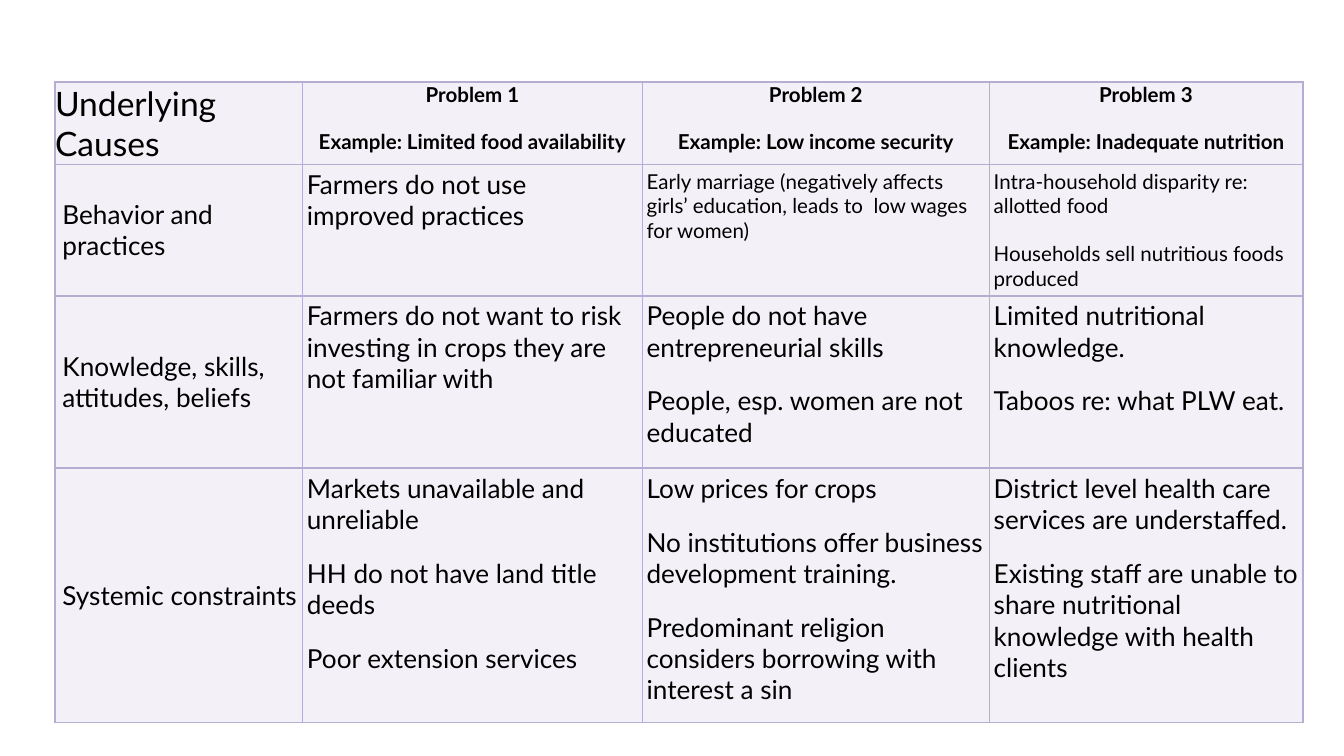
from lxml.etree import SubElement
from pptx import Presentation
from pptx.dml.color import RGBColor
from pptx.enum.text import MSO_ANCHOR as Anchor, PP_ALIGN as Align
from pptx.oxml.ns import qn
from pptx.util import Cm, Pt

BLACK = RGBColor(0x00, 0x00, 0x00)
LAVENDER = RGBColor(0xF3, 0xF1, 0xF7)
BORDER = RGBColor(0xB6, 0xAD, 0xD3)

COLUMN_WIDTHS = [4.68, 6.42, 6.56, 5.92]
ROW_HEIGHTS = [1.56, 2.48, 3.26, 4.81]

CAUSES = [
    [
        ["Underlying Causes"],
        ["Problem 1", "Example: Limited food availability"],
        ["Problem 2", "Example: Low income security"],
        ["Problem 3", "Example: Inadequate nutrition"],
    ],
    [
        ["Behavior and practices"],
        ["Farmers do not use improved practices"],
        ["Early marriage (negatively affects girls’ education, leads to  low wages for women)"],
        ["Intra-household disparity re: allotted food",
         "Households sell nutritious foods produced"],
    ],
    [
        ["Knowledge, skills, attitudes, beliefs"],
        ["Farmers do not want to risk investing in crops they are not familiar with"],
        ["People do not have entrepreneurial skills",
         "People, esp. women are not educated"],
        ["Limited nutritional knowledge.", "Taboos re: what PLW eat."],
    ],
    [
        ["Systemic constraints"],
        ["Markets unavailable and unreliable",
         "HH do not have land title deeds",
         "Poor extension services"],
        ["Low prices for crops",
         "No institutions offer business development training.",
         "Predominant religion considers borrowing with interest a sin"],
        ["District level health care services are understaffed.",
         "Existing staff are unable to share nutritional knowledge with health clients"],
    ],
]


def style_cell(cell, left, margin, anchor):
    """Give a cell its borders, fill, margins and anchor."""
    properties = cell._tc.get_or_add_tcPr()
    for side in ("a:lnL", "a:lnR", "a:lnT", "a:lnB"):
        line = SubElement(properties, qn(side), w=str(Pt(1)))
        solid = SubElement(line, qn("a:solidFill"))
        SubElement(solid, qn("a:srgbClr"), val=str(BORDER))
    cell.fill.solid()
    cell.fill.fore_color.rgb = LAVENDER
    cell.margin_left = left
    cell.margin_right = cell.margin_top = cell.margin_bottom = margin
    cell.vertical_anchor = anchor


def write_cell(cell, statements, size, bold, align):
    """Write one paragraph per statement."""
    frame = cell.text_frame
    for index, statement in enumerate(statements):
        paragraph = frame.add_paragraph() if index else frame.paragraphs[0]
        paragraph.text = statement
        paragraph.alignment = align
        paragraph.space_before = Pt(6 if index else 0)
        if len(statements) > 1:
            paragraph.space_after = Pt(6)
        font = paragraph.font
        font.name, font.size, font.bold = "Lato", Pt(size), bold
        font.color.rgb = BLACK


def text_size(row, column):
    """Return the text size in points for a place in the table."""
    if (row, column) == (0, 0):
        return 18
    return 11 if row == 0 or (row == 1 and column > 1) else 14


def add_causes_table(slide, left, top, width, height):
    """Place the table of underlying causes in the given box."""
    table = slide.shapes.add_table(
        len(ROW_HEIGHTS), len(COLUMN_WIDTHS), left, top, width, height).table
    table.first_row = table.horz_banding = False
    for column, share in zip(table.columns, COLUMN_WIDTHS):
        column.width = int(width * share / sum(COLUMN_WIDTHS))
    for row, share in zip(table.rows, ROW_HEIGHTS):
        row.height = int(height * share / sum(ROW_HEIGHTS))
    for r, causes in enumerate(CAUSES):
        for c, statements in enumerate(causes):
            cell = table.cell(r, c)
            is_problem = r == 0 and c > 0
            margin = Cm(0.08 if r and c else 0)
            indent = Cm(0.14) if r and c == 0 else margin
            style_cell(cell, indent, margin, Anchor.TOP if c else Anchor.MIDDLE)
            write_cell(cell, statements, text_size(r, c), is_problem,
                       Align.CENTER if is_problem else Align.LEFT)


def main():
    """Build and save the slide."""
    deck = Presentation()
    deck.slide_width, deck.slide_height = Cm(25.4), Cm(14.29)
    slide = deck.slides.add_slide(deck.slide_layouts[6])
    add_causes_table(slide, Cm(1.04), Cm(1.55),
                     Cm(sum(COLUMN_WIDTHS)), Cm(sum(ROW_HEIGHTS)))
    deck.save("out.pptx")


if __name__ == "__main__":
    main()
